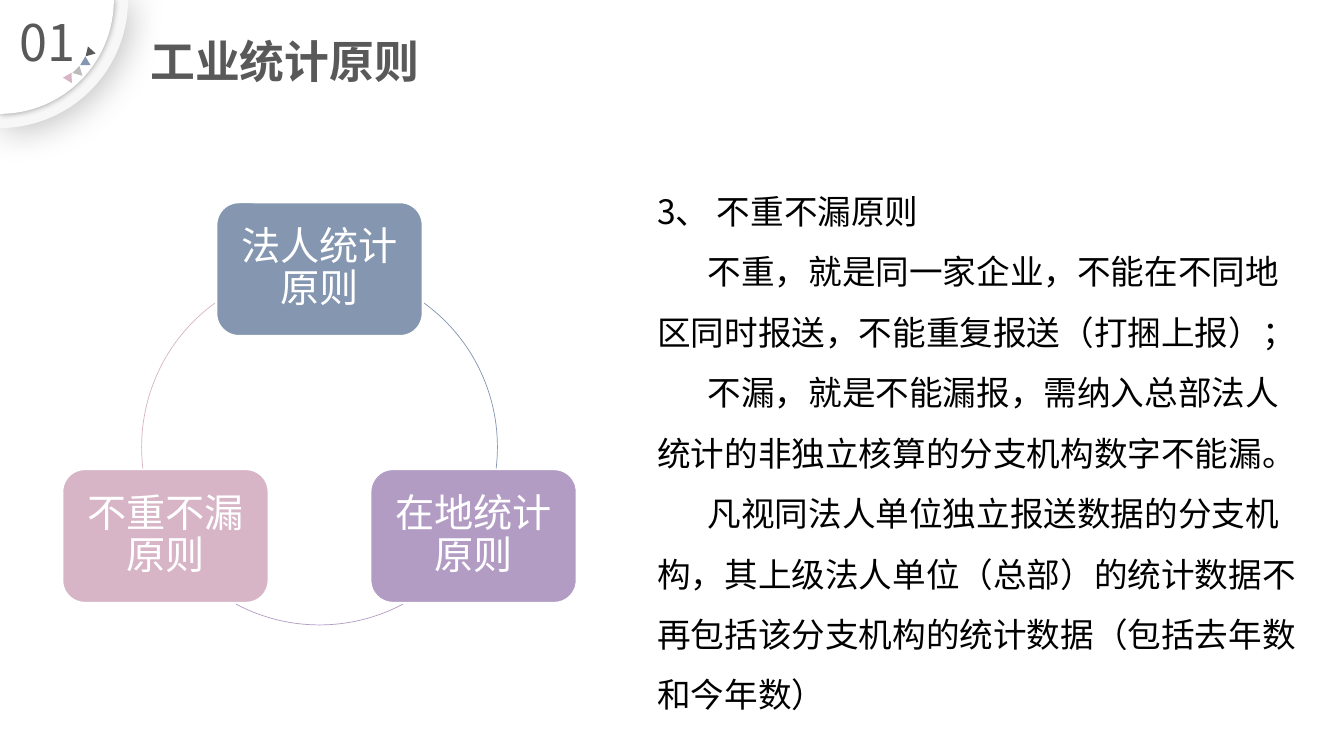
from dataclasses import dataclass
from math import cos, pi, radians, sin

from lxml import etree
from pptx import Presentation
from pptx.dml.color import RGBColor
from pptx.enum.shapes import MSO_SHAPE
from pptx.enum.text import MSO_ANCHOR, MSO_AUTO_SIZE, PP_ALIGN
from pptx.oxml.ns import qn
from pptx.util import Inches, Pt

CELL = Inches(0.1)
COLUMNS, ROWS = 133.33, 75
LEFT, CENTER = PP_ALIGN.LEFT, PP_ALIGN.CENTER
TOP, MIDDLE, BOTTOM = MSO_ANCHOR.TOP, MSO_ANCHOR.MIDDLE, MSO_ANCHOR.BOTTOM
NO_AUTOFIT = MSO_AUTO_SIZE.NONE
ROUNDED, ARC, TRIANGLE = MSO_SHAPE.ROUNDED_RECTANGLE, MSO_SHAPE.ARC, MSO_SHAPE.ISOSCELES_TRIANGLE

COLORS = {
    "white": "FFFFFF", "black": "000000", "rim": "F7F7F7", "dark": "595959",
    "blue": "8496B0", "purple": "B29CC4", "pink": "D7B5C6", "grey": "BCBCBC",
}
CJK_FONT = "Noto Sans CJK SC"

RING_X, RING_Y, RING_RADIUS = 31.7, 44.35, 17.65
CARD_WIDTH, CARD_HEIGHT = 20.4, 13.2
ARC_UNITS_PER_DEGREE = 0.6


@dataclass
class Principle:
    label: str
    color: str
    angle: float
    arc_start: float
    arc_end: float


@dataclass
class Chip:
    column: float
    row: float
    rotation: float
    color: str


@dataclass
class Disc:
    radius: float
    color: str
    opacity: int
    blur: float
    distance: float


PRINCIPLES = [
    Principle("法人统计原则", "blue", -90, 306, 7),
    Principle("在地统计原则", "purple", 30, 62, 118),
    Principle("不重不漏原则", "pink", 150, 173, 234),
]
CHIPS = [
    Chip(8.55, 4.75, 103, "dark"),
    Chip(8.1, 5.8, 120, "blue"),
    Chip(7.35, 6.75, 135, "grey"),
    Chip(6.4, 7.4, 150, "pink"),
]
DISCS = [Disc(12.7, "rim", 25, 26, 3), Disc(11.3, "white", 40, 5, 0)]
EXPLANATION = [
    "3、 不重不漏原则",
    "不重，就是同一家企业，不能在不同地区同时报送，不能重复报送（打捆上报）；",
    "不漏，就是不能漏报，需纳入总部法人统计的非独立核算的分支机构数字不能漏。",
    "凡视同法人单位独立报送数据的分支机构，其上级法人单位（总部）的统计数据不再包括该分支机构的统计数据（包括去年数和今年数）",
]


def cells(count: float) -> int:
    return round(count * CELL)


def rgb(name: str) -> RGBColor:
    return RGBColor.from_string(COLORS[name])


def assign(target, values: dict) -> None:
    for attribute, value in values.items():
        setattr(target, attribute, value)


def place(shape, column: float, row: float, width: float, height: float) -> None:
    assign(shape, {"left": cells(column), "top": cells(row),
                   "width": cells(width), "height": cells(height)})


def write(shape, lines: list[str], font: dict, color: str, paragraph_format: dict,
          anchor, inset: float | None = None) -> None:
    frame = shape.text_frame
    assign(frame, {"word_wrap": True, "auto_size": NO_AUTOFIT, "vertical_anchor": anchor})
    if inset is not None:
        assign(frame, {f"margin_{side}": cells(inset)
                       for side in ("left", "right", "top", "bottom")})
    for index, line in enumerate(lines):
        paragraph = frame.add_paragraph() if index else frame.paragraphs[0]
        assign(paragraph, paragraph_format)
        run = paragraph.add_run()
        run.text = line
        assign(run.font, font)
        run.font.color.rgb = rgb(color)
        etree.SubElement(run.font._element, qn("a:ea"), typeface=font["name"])


def add_preset(slide, kind, column: float, row: float, width: float, height: float):
    shape = slide.shapes.add_shape(kind, cells(column), cells(row), cells(width), cells(height))
    shape.shadow.inherit = False
    return shape


def fill(shape, color: str) -> None:
    shape.fill.solid()
    shape.fill.fore_color.rgb = rgb(color)


def draw_disc(slide, disc: Disc) -> None:
    outline = slide.shapes.build_freeform(0, 0, scale=1.0)
    rim = [(cells(disc.radius * cos(step * pi / 96)), cells(disc.radius * sin(step * pi / 96)))
           for step in range(49)]
    outline.add_line_segments(rim, close=True)
    quarter = outline.convert_to_shape()
    fill(quarter, disc.color)
    quarter.line.fill.background()
    quarter.shadow.inherit = False
    effects = quarter._element.spPr.find(qn("a:effectLst"))
    shadow = etree.SubElement(effects, qn("a:outerShdw"), blurRad=str(Pt(disc.blur)),
                              dist=str(Pt(disc.distance)), dir="2700000", rotWithShape="0")
    tint = etree.SubElement(shadow, qn("a:srgbClr"), val=COLORS["black"])
    etree.SubElement(tint, qn("a:alpha"), val=str(disc.opacity * 1000))


def draw_chip(slide, chip: Chip) -> None:
    triangle = add_preset(slide, TRIANGLE, chip.column, chip.row, 1, 0.9)
    triangle.rotation = chip.rotation
    fill(triangle, chip.color)
    triangle.line.fill.background()


def draw_principle(slide, principle: Principle) -> None:
    angle = radians(principle.angle)
    card = add_preset(slide, ROUNDED,
                      RING_X + RING_RADIUS * cos(angle) - CARD_WIDTH / 2,
                      RING_Y + RING_RADIUS * sin(angle) - CARD_HEIGHT / 2,
                      CARD_WIDTH, CARD_HEIGHT)
    fill(card, principle.color)
    card.line.color.rgb = rgb("white")
    card.line.width = Pt(1)
    write(card, [principle.label], {"name": "Arial", "size": Pt(28)}, "white",
          {"alignment": CENTER, "line_spacing": 0.9}, MIDDLE, 1.2)
    link = add_preset(slide, ARC, RING_X - RING_RADIUS, RING_Y - RING_RADIUS,
                      2 * RING_RADIUS, 2 * RING_RADIUS)
    link.adjustments[0] = principle.arc_start * ARC_UNITS_PER_DEGREE
    link.adjustments[1] = principle.arc_end * ARC_UNITS_PER_DEGREE
    link.fill.background()
    link.line.color.rgb = rgb(principle.color)
    link.line.width = Pt(0.5)


def write_explanation(body) -> None:
    place(body, 64.2, 16.4, 66.8, 55.5)
    write(body, EXPLANATION, {"name": CJK_FONT, "size": Pt(24)}, "black",
          {"alignment": LEFT, "line_spacing": 1.5, "space_before": Pt(0)}, TOP)
    for index, paragraph in enumerate(body.text_frame.paragraphs):
        properties = paragraph._p.get_or_add_pPr()
        properties.set("marL", "0")
        properties.set("indent", str(cells(5) if index else 0))
        etree.SubElement(properties, qn("a:buNone"))


def main() -> None:
    deck = Presentation()
    assign(deck, {"slide_width": cells(COLUMNS), "slide_height": cells(ROWS)})
    slide = deck.slides.add_slide(deck.slide_layouts[1])
    heading, body = slide.placeholders

    for disc in DISCS:
        draw_disc(slide, disc)
    for chip in CHIPS:
        draw_chip(slide, chip)

    section_number = slide.shapes.add_textbox(cells(0.4), cells(0.6), cells(8.7), cells(7.1))
    write(section_number, ["01"], {"name": CJK_FONT, "size": Pt(36)}, "dark",
          {"alignment": CENTER}, TOP)
    place(heading, 13.9, 4.1, 78.1, 5.2)
    write(heading, ["工业统计原则"], {"name": CJK_FONT, "size": Pt(32), "bold": True}, "dark",
          {"alignment": LEFT, "line_spacing": 0.9}, BOTTOM)

    for principle in PRINCIPLES:
        draw_principle(slide, principle)
    write_explanation(body)
    deck.save("out.pptx")


if __name__ == "__main__":
    main()
